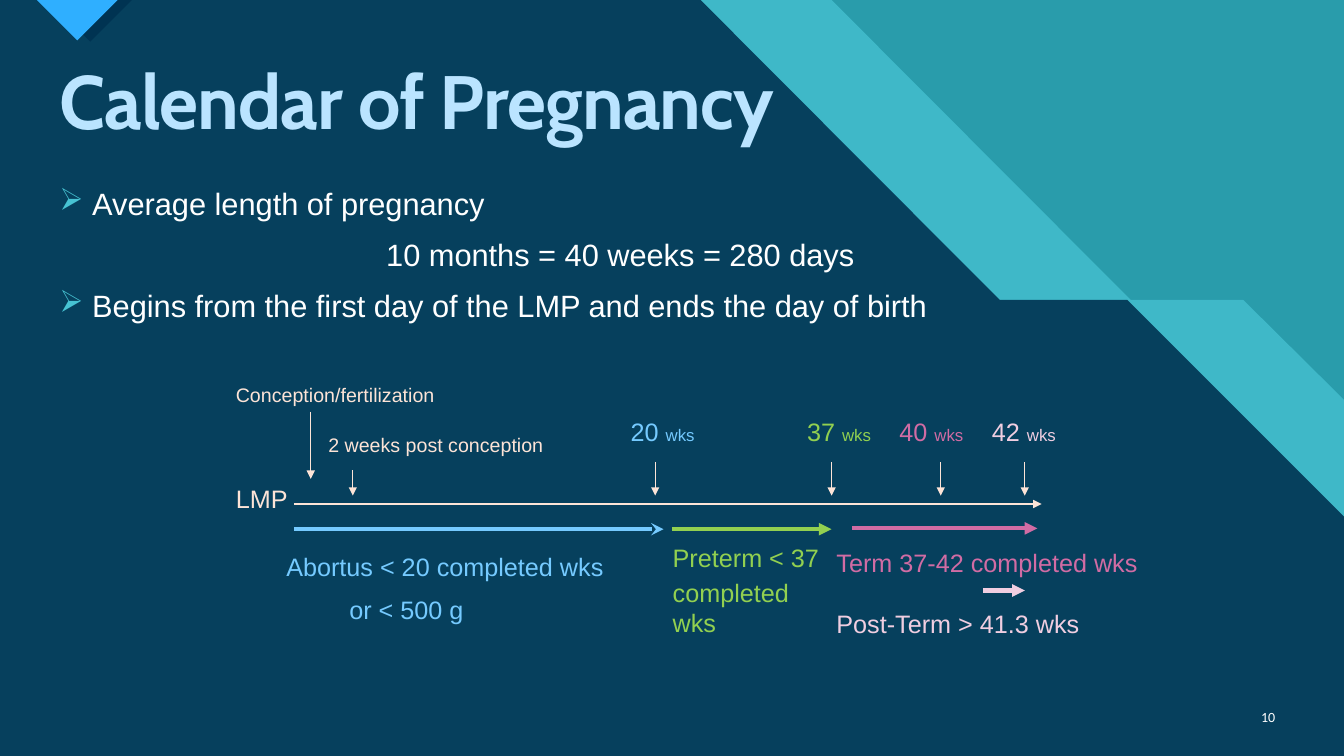
import pptx
import pptx.util
import pptx.dml.color
import pptx.enum.shapes
import pptx.enum.text
import pptx.oxml
import pptx.oxml.ns

# The slide is a grid of 160 columns by 90 rows, twelve cells to the inch.
COLS, ROWS = 160, 90
CELL = pptx.util.Inches(1) // 12
C = {
    "teal": "299CAB", "aqua": "47C3D3", "navy": "003352", "sky": "2FAFFF",
    "title": "BAE4FF", "white": "FFFFFF", "cream": "FDE4D7", "blue": "75CAFF",
    "green": "92D050", "pink": "D16CA4", "blush": "F0CEE1",
}
AXIS_ROW, ARROW_ROW, WEEK_ROW = 60, 63, 49


def cells(n):
    return pptx.util.Emu(round(n * CELL))


def rgb(name):
    return pptx.dml.color.RGBColor.from_string(C[name])


def add_xml(parent, tag, **attrs):
    child = pptx.oxml.parse_xml(f"<{tag} {pptx.oxml.ns.nsdecls('a')}/>")
    for key, value in attrs.items():
        child.set(key, str(value))
    parent.append(child)
    return child


def polygon(s, points, color, opacity=100):
    pts = [(cells(x), cells(y)) for x, y in points]
    fb = s.shapes.build_freeform(*pts[0])
    fb.add_line_segments(pts[1:], close=True)
    sp = fb.convert_to_shape()
    sp.shadow.inherit = False
    sp.line.fill.background()
    sp.fill.solid()
    sp.fill.fore_color.rgb = rgb(color)
    if opacity < 100:
        clr = sp.fill._xPr.find(".//" + pptx.oxml.ns.qn("a:srgbClr"))
        add_xml(clr, "a:alpha", val=opacity * 1000)


def text(s, x, y, w, h, paragraphs, size=18, color="white", font="Arial", bold=False,
         wrap=True, right=False, middle=False, before=0, after=0, line=None, spc=None):
    """Each paragraph is a dict: runs as (text, size or None), left indent, bullet."""
    sp = s.shapes.add_textbox(cells(x), cells(y), cells(w), cells(h))
    tf = sp.text_frame
    tf.word_wrap = wrap
    if middle:
        tf.vertical_anchor = pptx.enum.text.MSO_ANCHOR.MIDDLE
    for i, para in enumerate(paragraphs):
        p = tf.add_paragraph() if i else tf.paragraphs[0]
        if right:
            p.alignment = pptx.enum.text.PP_ALIGN.RIGHT
        if line:
            p.line_spacing = line
        p.space_before = pptx.util.Pt(before if i else 0)
        p.space_after = pptx.util.Pt(after)
        pPr = p._p.get_or_add_pPr()
        indent = cells(para.get("indent", 0))
        pPr.set("marL", str(indent))
        if "bullet" in para:
            pPr.set("indent", str(-indent))
            add_xml(add_xml(pPr, "a:buClr"), "a:srgbClr", val=C["aqua"])
            add_xml(pPr, "a:buChar", char=para["bullet"])
        for words, run_size in para["runs"]:
            r = p.add_run()
            r.text = words
            r.font.size = pptx.util.Pt(run_size or size)
            r.font.name = font
            r.font.bold = bold
            r.font.color.rgb = rgb(color)
            if spc is not None:
                r._r.get_or_add_rPr().set("spc", str(spc))


def plain(words, **options):
    return {"runs": [(words, None)], **options}


def arrow(s, x1, y1, x2, y2, color="cream", width=0.75, head="triangle"):
    cx = s.shapes.add_connector(pptx.enum.shapes.MSO_CONNECTOR.STRAIGHT,
                                cells(x1), cells(y1), cells(x2), cells(y2))
    cx.line.color.rgb = rgb(color)
    cx.line.width = pptx.util.Pt(width)
    add_xml(cx.line._get_or_add_ln(), "a:tailEnd", type=head)
    add_xml(cx._element.spPr, "a:effectLst")


def backdrop(s):
    polygon(s, [(0, 0), (COLS, 0), (COLS, ROWS), (0, ROWS)], "teal")
    bands = (("aqua", 74, 99, 134.6, 148, 47.6), ("navy", 90, 83.4, 119, 134.2, 61.5))
    for color, opacity, top, step, step_end, edge in bands:
        polygon(s, [(0, 0), (top, 0), (step, 35.7), (step_end, 35.7), (COLS, edge),
                    (COLS, ROWS), (0, ROWS)], color, opacity)
    for color, left, right, depth in (("navy", 5.8, 15.7, 4.95), ("sky", 4.4, 14, 4.8)):
        polygon(s, [(left, 0), ((left + right) / 2, depth), (right, 0)], color)


def week_mark(s, weeks, label_x, label_w, x, color):
    text(s, label_x, WEEK_ROW, label_w, 4.8,
         [{"runs": [(f"{weeks} ", None), ("wks", 12)]}], color=color, wrap=False)
    arrow(s, x, 55, x, 59)


def timeline(s):
    arrow(s, 35, AXIS_ROW, 124, AXIS_ROW)
    text(s, 26.9, 57, 10, 4.8, [plain("LMP")], color="cream")
    text(s, 26.9, 45, 30, 4, [plain("Conception/fertilization")], size=14, color="cream")
    arrow(s, 37, 49, 37, 57)
    text(s, 37.9, 51, 32, 4, [plain("2 weeks post conception")], size=14, color="cream")
    arrow(s, 42, 56, 42, 59)
    for mark in ((20, 73.9, 14, 78, "blue"), (37, 94.9, 12, 99, "green"),
                 (40, 105.9, 11, 112, "pink"), (42, 116.9, 10, 122, "blush")):
        week_mark(s, *mark)


def periods(s):
    for x1, x2, y, color, head in (
            (35, 79, ARROW_ROW, "blue", "stealth"),
            (80, 99, ARROW_ROW, "green", "triangle"),
            (101.4, 123.5, ARROW_ROW - 0.1, "pink", "triangle"),
            (117, 122, 70.3, "blush", "triangle")):
        arrow(s, x1, y, x2, y, color, 3, head)
    text(s, 32.9, 65, 52, 10.2,
         [plain("Abortus < 20 completed wks"), plain("or < 500 g", indent=7.5)],
         color="blue", before=9)
    text(s, 78.9, 64, 20, 12.6, [plain("Preterm < 37"), plain("completed wks")],
         color="green", before=3)
    text(s, 98.4, 64.6, 39, 4.8, [plain("Term 37-42 completed wks")], color="pink")
    text(s, 98.4, 71.8, 31.7, 4.8, [plain("Post-Term > 41.3 wks")], color="blush",
         wrap=False)


def main():
    prs = pptx.Presentation()
    prs.slide_width, prs.slide_height = cells(COLS), cells(ROWS)
    s = prs.slides.add_slide(prs.slide_layouts[6])
    backdrop(s)
    text(s, 5.9, 7.1, 147, 11, [plain("Calendar of Pregnancy")], size=54, color="title",
         font="Cabin", bold=True, line=0.9, spc=-70)
    text(s, 5.9, 21.4, 108, 20.5, [
        plain("Average length of pregnancy", bullet="➢", indent=3.9),
        plain("10 months = 40 weeks = 280 days", indent=38.9),
        plain("Begins from the first day of the LMP and ends the day of birth",
              bullet="➢", indent=3.9),
    ], size=22, before=6, after=4)
    timeline(s)
    periods(s)
    text(s, 147.7, 82.9, 5.3, 4.8, [plain("10")], size=10, font="Calibri",
         right=True, middle=True)
    prs.save("out.pptx")


if __name__ == "__main__":
    main()
